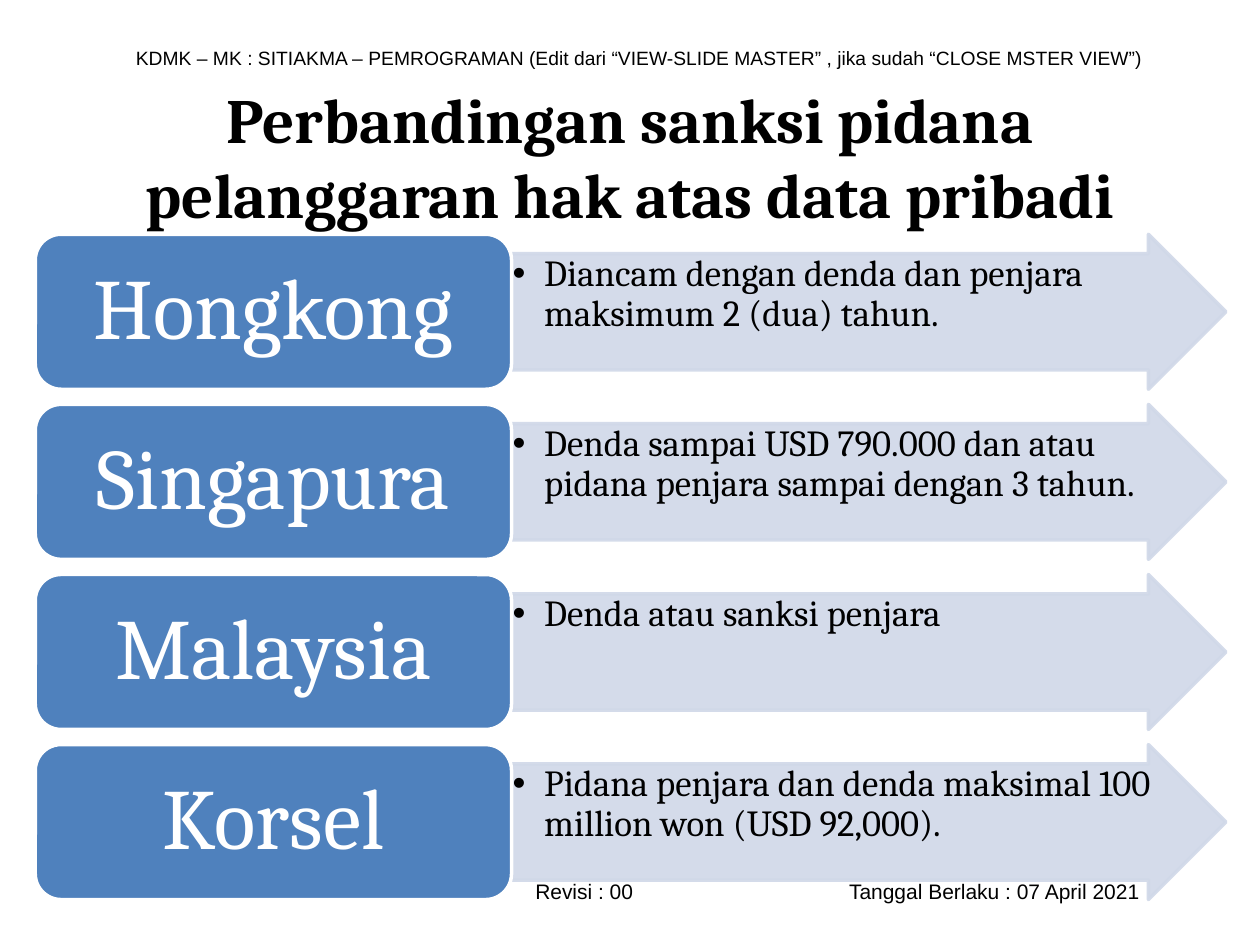
from typing import NamedTuple

import pptx
import pptx.dml.color
import pptx.enum.shapes
import pptx.enum.text
import pptx.oxml.ns
import pptx.util
from lxml import etree
from pptx.util import Inches

RGBColor = pptx.dml.color.RGBColor
Shape = pptx.enum.shapes.MSO_SHAPE
Align = pptx.enum.text.PP_ALIGN
Anchor = pptx.enum.text.MSO_ANCHOR
qn = pptx.oxml.ns.qn

BLACK = RGBColor(0x00, 0x00, 0x00)
WHITE = RGBColor(0xFF, 0xFF, 0xFF)
BLUE = RGBColor(0x4F, 0x81, 0xBD)
PALE_BLUE = RGBColor(0xD0, 0xD8, 0xE8)

COUNTRY_LEFT, COUNTRY_WIDTH = 0.28, 3.78
SANCTION_LEFT, SANCTION_WIDTH = COUNTRY_LEFT + COUNTRY_WIDTH, 5.67
FIRST_TOP, ROW_HEIGHT, ROW_PITCH = 1.86, 1.23, 1.35


class Sanction(NamedTuple):
    country: str
    penalty: str


SANCTIONS = [
    Sanction("Hongkong", "Diancam dengan denda dan penjara maksimum 2 (dua) tahun."),
    Sanction("Singapura", "Denda sampai USD 790.000 dan atau pidana penjara sampai dengan 3 tahun."),
    Sanction("Malaysia", "Denda atau sanksi penjara"),
    Sanction("Korsel", "Pidana penjara dan denda maksimal 100 million won (USD 92,000)."),
]


def write(shape, text: str, *, size: float, font: str = "Cambria",
          color: RGBColor = BLACK, bold: bool = False, align=Align.LEFT,
          anchor=Anchor.MIDDLE, inset: tuple[float, float] = (0.1, 0.05),
          line_spacing: float = 1.0, bullet: bool = False) -> None:
    """Fill a shape with one paragraph; inset is (horizontal, vertical) in inches."""
    frame = shape.text_frame
    frame.word_wrap = True
    frame.vertical_anchor = anchor
    frame.margin_left = frame.margin_right = Inches(inset[0])
    frame.margin_top = frame.margin_bottom = Inches(inset[1])
    paragraph = frame.paragraphs[0]
    paragraph.alignment = align
    paragraph.line_spacing = line_spacing
    if bullet:
        properties = paragraph._p.get_or_add_pPr()
        properties.set("marL", str(Inches(0.25)))
        properties.set("indent", str(Inches(-0.25)))
        etree.SubElement(properties, qn("a:buFont"), typeface="Arial")
        etree.SubElement(properties, qn("a:buChar"), char="•")
    run = paragraph.add_run()
    run.text = text
    run.font.size = pptx.util.Pt(size)
    run.font.name = font
    run.font.bold = bold
    run.font.color.rgb = color


def add_text(slide, left: float, top: float, width: float, height: float,
             text: str, **text_format) -> None:
    box = slide.shapes.add_textbox(Inches(left), Inches(top), Inches(width), Inches(height))
    write(box, text, **text_format)


def add_block(slide, preset, left: float, top: float, width: float,
              fill: RGBColor, line: RGBColor, opacity: int = 100):
    block = slide.shapes.add_shape(
        preset, Inches(left), Inches(top), Inches(width), Inches(ROW_HEIGHT))
    block.shadow.inherit = False
    block.fill.solid()
    block.fill.fore_color.rgb = fill
    block.line.color.rgb = line
    block.line.width = pptx.util.Pt(2)
    if opacity < 100:
        for color in block._element.spPr.iter(qn("a:srgbClr")):
            etree.SubElement(color, qn("a:alpha"), val=str(opacity * 1000))
    return block


def add_sanction(slide, sanction: Sanction, top: float) -> None:
    arrow = add_block(slide, Shape.RIGHT_ARROW, SANCTION_LEFT, top, SANCTION_WIDTH,
                      PALE_BLUE, PALE_BLUE, opacity=90)
    arrow.adjustments[0] = 0.75
    arrow.adjustments[1] = 0.5
    write(arrow, sanction.penalty, size=21, anchor=Anchor.TOP,
          inset=(0.01, 0.01), line_spacing=0.9, bullet=True)
    country = add_block(slide, Shape.ROUNDED_RECTANGLE, COUNTRY_LEFT, top,
                        COUNTRY_WIDTH, BLUE, WHITE)
    write(country, sanction.country, size=49, color=WHITE, align=Align.CENTER,
          inset=(0.2, 0.1), line_spacing=0.9)


def main() -> None:
    presentation = pptx.Presentation()
    presentation.slide_width = Inches(10)
    presentation.slide_height = Inches(7.5)
    slide = presentation.slides.add_slide(presentation.slide_layouts[6])

    add_text(slide, 0.98, 0.31, 8.35, 0.29,
             "KDMK – MK : SITIAKMA – PEMROGRAMAN (Edit dari “VIEW-SLIDE MASTER” , "
             "jika sudah “CLOSE MSTER VIEW”)",
             size=11, font="Arial", align=Align.JUSTIFY)
    add_text(slide, 4.15, 6.92, 1.5, 0.3, "Revisi : 00", size=12, font="Arial")
    add_text(slide, 6.64, 6.92, 3.01, 0.3, "Tanggal Berlaku : 07 April 2021",
             size=12, font="Arial")
    add_text(slide, 0.5, 0.61, 9, 1.25,
             "Perbandingan sanksi pidana pelanggaran hak atas data pribadi",
             size=36, bold=True, align=Align.CENTER)
    for row, sanction in enumerate(SANCTIONS):
        add_sanction(slide, sanction, FIRST_TOP + row * ROW_PITCH)

    presentation.save("out.pptx")


if __name__ == "__main__":
    main()
